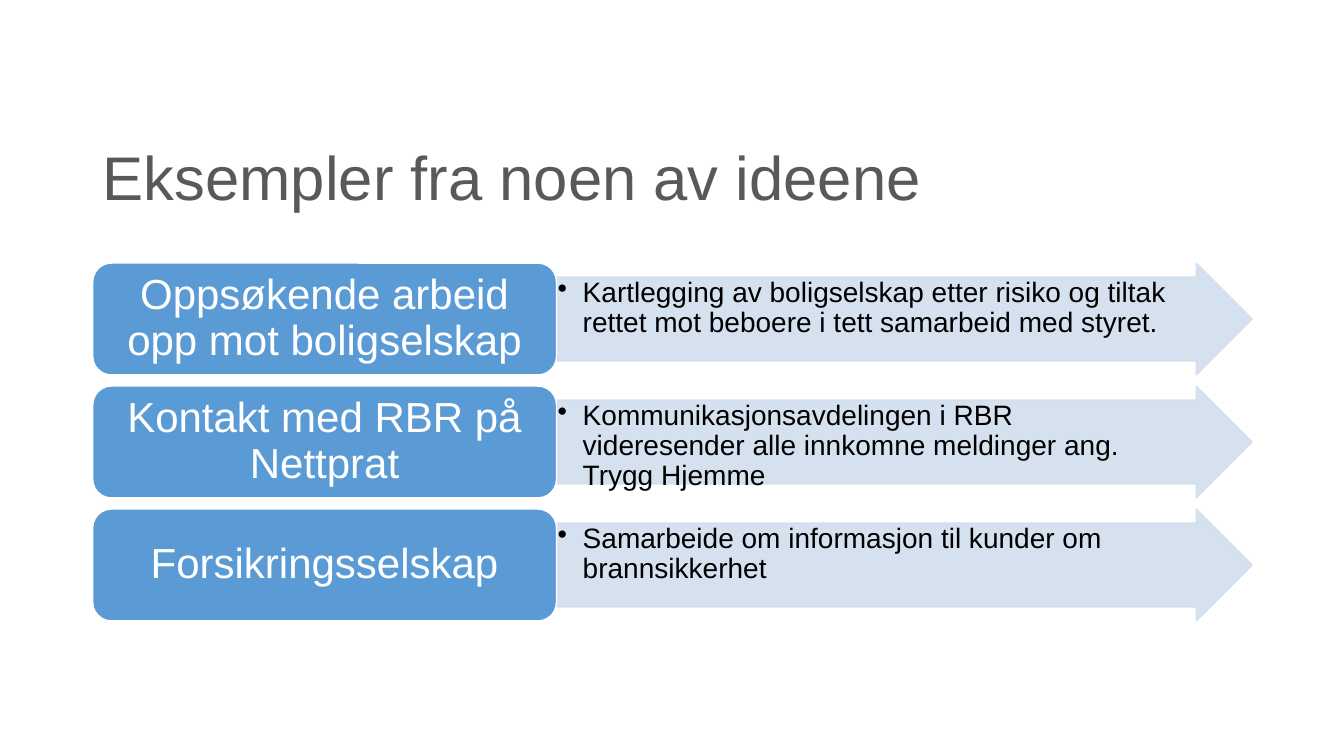
from dataclasses import dataclass

from lxml.etree import SubElement
from pptx import Presentation
from pptx.dml.color import RGBColor as RGB
from pptx.enum.shapes import MSO_SHAPE as SHAPE
from pptx.enum.text import MSO_ANCHOR as ANCHOR, PP_ALIGN as ALIGN
from pptx.oxml.ns import qn
from pptx.util import Inches, Pt


@dataclass(frozen=True)
class Theme:
    """Colours, font and type sizes of the slide."""
    font: str = "Arial"
    title: RGB = RGB(0x59, 0x59, 0x59)
    label: RGB = RGB(0x5B, 0x9B, 0xD5)
    arrow: RGB = RGB(0xD2, 0xDE, 0xEF)
    white: RGB = RGB(0xFF, 0xFF, 0xFF)
    black: RGB = RGB(0, 0, 0)
    title_size: int = 44
    label_size: int = 30
    detail_size: int = 20
    arrow_alpha: int = 90


T = Theme()

IDEAS = [
    ("Oppsøkende arbeid opp mot boligselskap",
     "Kartlegging av boligselskap etter risiko og tiltak rettet mot beboere i tett samarbeid med styret."),
    ("Kontakt med RBR på Nettprat",
     "Kommunikasjonsavdelingen i RBR videresender alle innkomne meldinger ang. Trygg Hjemme"),
    ("Forsikringsselskap",
     "Samarbeide om informasjon til kunder om brannsikkerhet"),
]


def set_attrs(obj, values):
    """Set each named attribute on an object."""
    for name, value in values.items():
        setattr(obj, name, value)


def write(sp, text, size, color, align, anchor, insets, bullet=0):
    """Write one paragraph in a shape, with an optional hanging bullet."""
    tf = sp.text_frame
    left, top, right, bottom = map(Inches, insets)
    set_attrs(tf, dict(word_wrap=True, vertical_anchor=anchor, margin_left=left,
                       margin_top=top, margin_right=right, margin_bottom=bottom))
    p = tf.paragraphs[0]
    set_attrs(p, dict(alignment=align, line_spacing=0.9))
    if bullet:
        pPr = p._p.get_or_add_pPr()
        pPr.set("marL", str(Inches(bullet)))
        pPr.set("indent", str(Inches(-bullet)))
        SubElement(pPr, qn("a:buChar"), char="•")
    r = p.add_run()
    r.text = text
    set_attrs(r.font, dict(name=T.font, size=Pt(size)))
    r.font.color.rgb = color


def add_block(s, kind, box, fill, line, alpha=100):
    """Add a filled and outlined shape without a shadow."""
    sp = s.shapes.add_shape(kind, *map(Inches, box))
    sp.shadow.inherit = False
    sp.fill.solid()
    sp.fill.fore_color.rgb = fill
    sp.line.color.rgb = line
    sp.line.width = Pt(1)
    if alpha < 100:
        for clr in sp._element.spPr.iter(qn("a:srgbClr")):
            SubElement(clr, qn("a:alpha"), val=str(alpha * 1000))
    return sp


def add_title(s, box, text):
    """Place the slide title in its box."""
    sp = s.shapes.add_textbox(*map(Inches, box))
    write(sp, text, T.title_size, T.title, ALIGN.LEFT, ANCHOR.MIDDLE,
          (0.1, 0.05, 0.1, 0.05))


def add_idea(s, box, label, detail):
    """Place a label and the arrow that explains it, split 40 to 60."""
    x, y, w, h = box
    split = 0.4 * w
    arrow = add_block(s, SHAPE.RIGHT_ARROW, (x + split, y, w - split, h),
                      T.arrow, T.arrow, T.arrow_alpha)
    arrow.adjustments[0] = 0.75
    arrow.adjustments[1] = 0.5
    write(arrow, detail, T.detail_size, T.black, ALIGN.LEFT, ANCHOR.TOP,
          (0.01, 0.01, 0.29, 0.01), bullet=0.25)
    tag = add_block(s, SHAPE.ROUNDED_RECTANGLE, (x, y, split, h), T.label, T.white)
    write(tag, label, T.label_size, T.white, ALIGN.CENTER, ANCHOR.MIDDLE,
          (0.12, 0.06, 0.12, 0.06))


def add_ideas(s, box, ideas, gap=0.11):
    """Stack the ideas in equal rows inside the box."""
    x, y, w, h = box
    row = (h - gap * (len(ideas) - 1)) / len(ideas)
    for i, (label, detail) in enumerate(ideas):
        add_idea(s, (x, y + i * (row + gap), w, row), label, detail)


def main():
    """Build and save the slide."""
    prs = Presentation()
    set_attrs(prs, dict(slide_width=Inches(13.33), slide_height=Inches(7.5)))
    s = prs.slides.add_slide(prs.slide_layouts[6])
    add_title(s, (0.92, 1.07, 11.5, 1.45), "Eksempler fra noen av ideene")
    add_ideas(s, (0.92, 2.61, 11.5, 3.55), IDEAS)
    prs.save("out.pptx")


if __name__ == "__main__":
    main()
